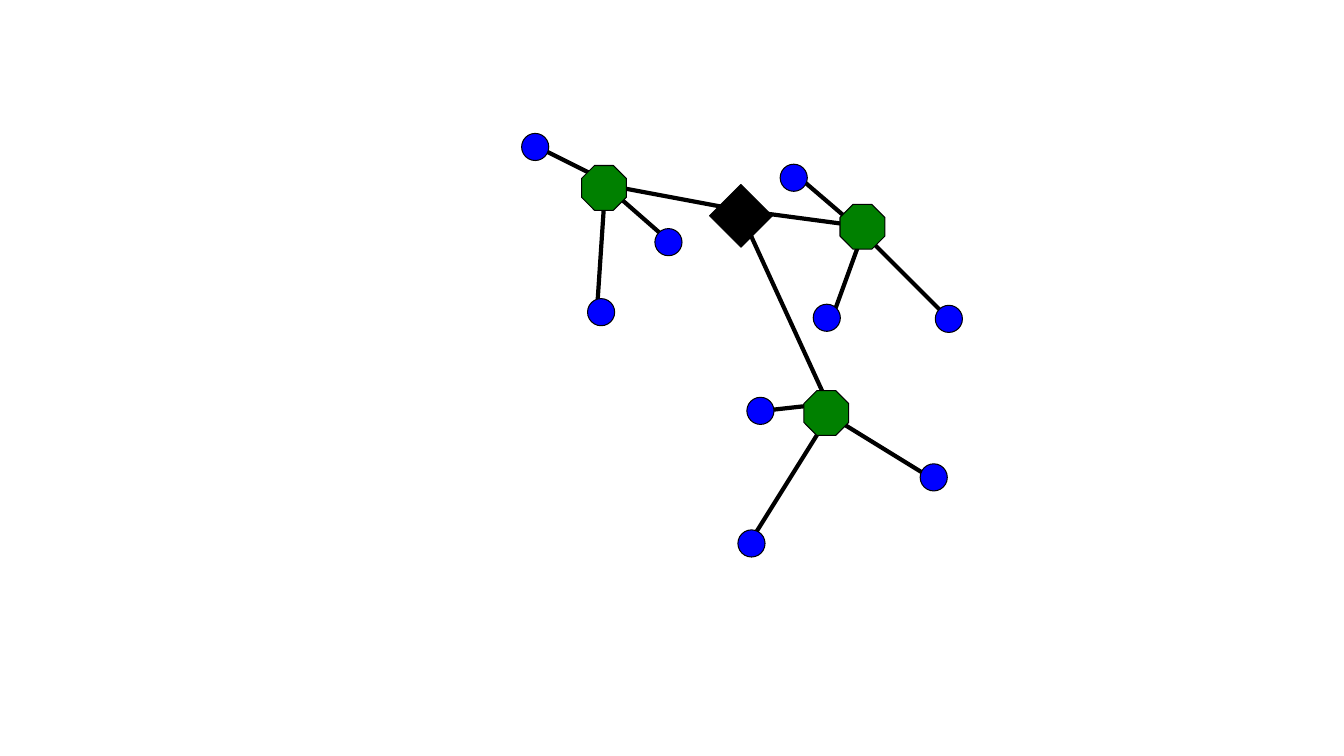
from typing import NamedTuple

from lxml import etree
from pptx import Presentation
from pptx import util as u
from pptx.dml.color import RGBColor
from pptx.enum import shapes as kinds
from pptx.oxml import ns
from pptx.slide import Slide

COLOURS = {"outline": "000000", "core": "000000", "hub": "008000", "leaf": "0000FF"}
LINK_WIDTH, OUTLINE_WIDTH = 3, 0.75
OCTAGON_CUT = 0.29


class Point(NamedTuple):
    x: float
    y: float


class NodeStyle(NamedTuple):
    preset: kinds.MSO_SHAPE
    size: float
    colour: str


class Link(NamedTuple):
    start: Point
    end: Point


class Cluster(NamedTuple):
    hub: Point
    leaves: list[Point]
    links: list[Link]


CORE = NodeStyle(kinds.MSO_SHAPE.DIAMOND, 44.8, "core")
HUB = NodeStyle(kinds.MSO_SHAPE.OCTAGON, 32, "hub")
LEAF = NodeStyle(kinds.MSO_SHAPE.FLOWCHART_CONNECTOR, 19.4, "leaf")

# Node centres and link ends, in points; each cluster's last link leads to the core
CORE_CENTRE = Point(529.3, 154.2)
CORE_END = Point(528, 150)
CLUSTERS = [
    Cluster(
        Point(616, 162),
        [Point(567, 127), Point(590.6, 227), Point(677.8, 227.8)],
        [
            Link(Point(570, 126), Point(612, 162)),
            Link(Point(618, 162), Point(594, 228)),
            Link(Point(618, 168), Point(678, 228)),
            Link(Point(618, 162), CORE_END),
        ],
    ),
    Cluster(
        Point(590.2, 295),
        [Point(543.2, 293.5), Point(536.8, 388.2), Point(667, 341)],
        [
            Link(Point(540, 294), Point(594, 288)),
            Link(Point(594, 294), Point(534, 390)),
            Link(Point(588, 294), Point(666, 342)),
            Link(Point(594, 294), CORE_END),
        ],
    ),
    Cluster(
        Point(431.4, 134.2),
        [Point(382.3, 105), Point(477.5, 173), Point(429.4, 223)],
        [
            Link(Point(378, 102), Point(438, 132)),
            Link(Point(432, 132), Point(480, 174)),
            Link(Point(432, 138), Point(426, 228)),
            Link(Point(432, 132), CORE_END),
        ],
    ),
]


def colour(key: str) -> RGBColor:
    return RGBColor.from_string(COLOURS[key])


def draw_link(slide: Slide, link: Link) -> None:
    edge = slide.shapes.add_connector(
        kinds.MSO_CONNECTOR.STRAIGHT, *(u.Pt(value) for value in link.start + link.end)
    )
    edge.line.color.rgb = colour("outline")
    edge.line.width = u.Pt(LINK_WIDTH)
    etree.SubElement(edge._element.spPr, ns.qn("a:effectLst"))


def draw_node(slide: Slide, centre: Point, style: NodeStyle) -> None:
    half = style.size / 2
    node = slide.shapes.add_shape(
        style.preset,
        u.Pt(centre.x - half),
        u.Pt(centre.y - half),
        u.Pt(style.size),
        u.Pt(style.size),
    )
    node.shadow.inherit = False
    node.fill.solid()
    node.fill.fore_color.rgb = colour(style.colour)
    node.line.color.rgb = colour("outline")
    node.line.width = u.Pt(OUTLINE_WIDTH)
    if style is HUB:
        node.adjustments[0] = OCTAGON_CUT


def main() -> None:
    deck = Presentation()
    deck.slide_width, deck.slide_height = u.Pt(960), u.Pt(540)
    slide = deck.slides.add_slide(deck.slide_layouts.get_by_name("Blank"))

    # Links lie behind every node
    for cluster in CLUSTERS:
        for link in cluster.links:
            draw_link(slide, link)

    # Core, hubs and leaves
    draw_node(slide, CORE_CENTRE, CORE)
    for cluster in CLUSTERS:
        draw_node(slide, cluster.hub, HUB)
        for leaf in cluster.leaves:
            draw_node(slide, leaf, LEAF)

    deck.save("out.pptx")


if __name__ == "__main__":
    main()
